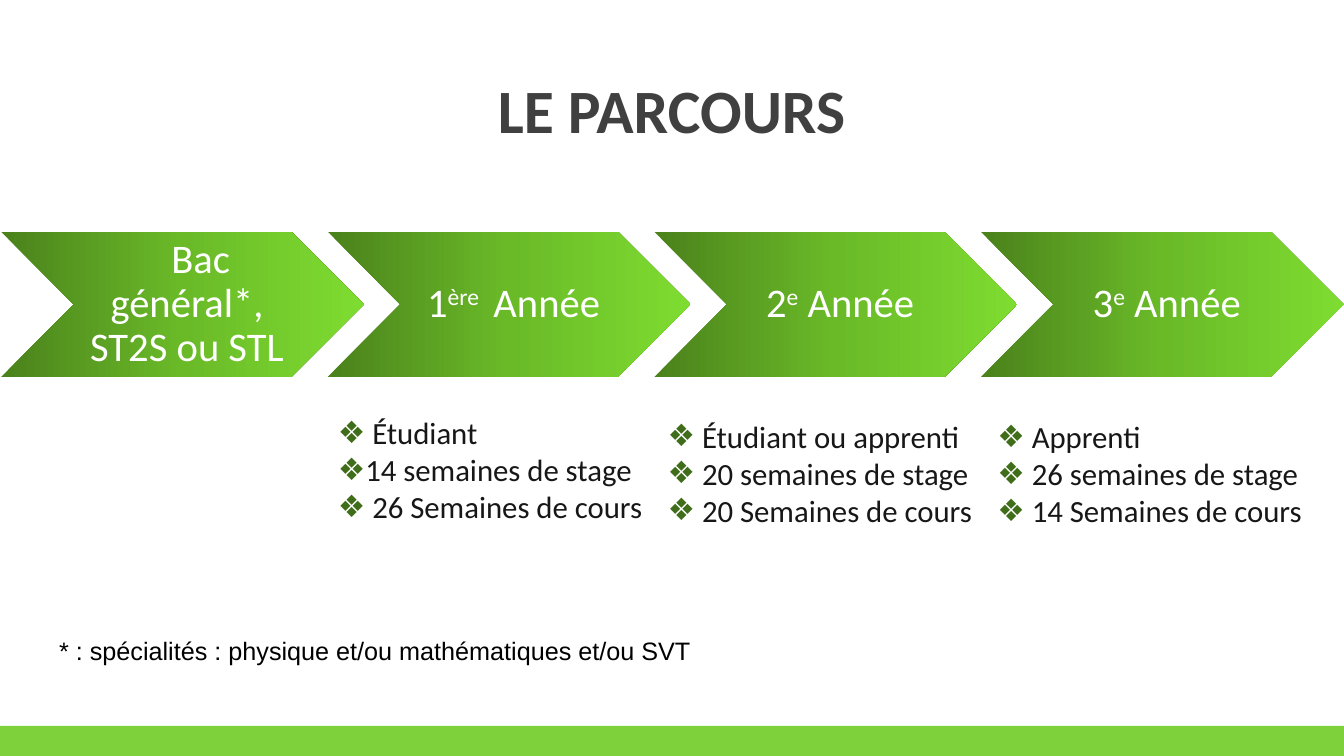
"""Build the slide showing the course path, year by year."""
from copy import deepcopy

from lxml import etree
from pptx import Presentation
from pptx import util as u
from pptx.dml.color import RGBColor
from pptx.enum import shapes, text
from pptx.oxml.ns import qn

THEME = {
    "bar": "7FD13B",
    "bullet": "3F6D19",
    "gradient": [(0, "4B821C"), (0.5, "6ABA28"), (1, "7EDC30")],
    "title": {"name": "Calibri", "size": u.Pt(44), "bold": True, "color": "404040"},
    "stage": {"name": "Calibri", "size": u.Pt(29), "bold": False, "color": "FFFFFF"},
    "list": {"name": "Calibri", "size": u.Pt(22), "bold": False, "color": "171717"},
    "note": {"name": "Arial", "size": u.Pt(18), "bold": False, "color": "000000"},
}
STAGES = [
    ("Bac général*, ST2S ou STL", "", ""),
    ("1", "ère ", " Année"),
    ("2", "e", " Année"),
    ("3", "e", " Année"),
]
YEARS = [
    (10.31, 3.05, [" Étudiant", "14 semaines de stage", " 26 Semaines de cours"]),
    (10.39, 3.81, [" Étudiant ou apprenti", " 20 semaines de stage", " 20 Semaines de cours"]),
    (10.41, 3.81, [" Apprenti", " 26 semaines de stage", " 14 Semaines de cours"]),
]
FRAME = {"word_wrap": True, "auto_size": text.MSO_AUTO_SIZE.NONE}
CENTRED = {"alignment": text.PP_ALIGN.CENTER, "line_spacing": 0.9}


def assign(target, values):
    for key, value in values.items():
        setattr(target, key, value)


def add_text(paragraph, words, role):
    run = paragraph.add_run()
    run.text = words
    style = dict(THEME[role])
    run.font.color.rgb = RGBColor.from_string(style.pop("color"))
    assign(run.font, style)
    return run


deck = Presentation()
assign(deck, {"slide_width": u.Cm(33.87), "slide_height": u.Cm(19.05)})
slide = deck.slides.add_slide(deck.slide_layouts.get_by_name("Comparison"))

bar = slide.shapes.add_shape(
    shapes.MSO_SHAPE.RECTANGLE, 0, u.Cm(18.29), deck.slide_width, u.Cm(0.76))
bar.shadow.inherit = False
bar.fill.solid()
bar.fill.fore_color.rgb = RGBColor.from_string(THEME["bar"])
bar.line.fill.background()

heading = slide.shapes.title
assign(heading, {"left": u.Cm(4.23), "top": u.Cm(1.27),
                 "width": u.Cm(25.4), "height": u.Cm(3.18)})
assign(heading.text_frame, {**FRAME, "vertical_anchor": text.MSO_ANCHOR.MIDDLE})
assign(heading.text_frame.paragraphs[0], CENTRED)
add_text(heading.text_frame.paragraphs[0], "LE PARCOURS", "title")

path_group = slide.shapes.add_group_shape()
for column, (label, ordinal, rest) in enumerate(STAGES):
    stage = path_group.shapes.add_shape(
        shapes.MSO_SHAPE.CHEVRON, u.Cm(0.03 + 8.23 * column), u.Cm(5.84),
        u.Cm(9.14), u.Cm(3.66))
    stage.shadow.inherit = False
    stage.line.fill.background()
    stage.fill.gradient()
    stage.fill.gradient_angle = 0
    stops = stage._element.spPr.find(".//" + qn("a:gsLst"))
    stops.append(deepcopy(stops[0]))
    for stop, (position, color) in zip(stage.fill.gradient_stops, THEME["gradient"]):
        stop.position = position
        stop.color.rgb = RGBColor.from_string(color)
    assign(stage.text_frame, {
        **FRAME, "vertical_anchor": text.MSO_ANCHOR.MIDDLE, "margin_left": u.Cm(0.33),
        "margin_right": u.Cm(0.1), "margin_top": u.Cm(0.1), "margin_bottom": u.Cm(0.1)})
    line = stage.text_frame.paragraphs[0]
    assign(line, {**CENTRED, "space_after": u.Pt(10.2)})
    add_text(line, label, "stage")
    if ordinal:
        raised = add_text(line, ordinal, "stage")
        raised._r.get_or_add_rPr().set("baseline", "30000")
        add_text(line, rest, "stage")
    else:
        line._p.get_or_add_pPr().set("indent", str(u.Cm(0.69)))

spare, *year_lists = [holder for holder in slide.placeholders
                      if holder.placeholder_format.idx > 0]
spare._element.getparent().remove(spare._element)
for column, (year_list, (top, height, items)) in enumerate(zip(year_lists, YEARS)):
    assign(year_list, {"left": u.Cm(8.26 + 8.31 * column), "top": u.Cm(top),
                       "width": u.Cm(8.99), "height": u.Cm(height)})
    frame = year_list.text_frame
    assign(frame, {**FRAME, "vertical_anchor": text.MSO_ANCHOR.TOP})
    for row, item in enumerate(items):
        line = frame.add_paragraph() if row else frame.paragraphs[0]
        assign(line, {"alignment": text.PP_ALIGN.LEFT, "line_spacing": 1.0,
                      "space_before": u.Pt(0), "space_after": u.Pt(0)})
        add_text(line, item, "list")
        props = line._p.get_or_add_pPr()
        props.set("marL", str(u.Cm(0.61)))
        props.set("indent", str(u.Cm(-0.61)))
        tint = etree.SubElement(props, qn("a:buClr"))
        etree.SubElement(tint, qn("a:srgbClr"), val=THEME["bullet"])
        etree.SubElement(props, qn("a:buChar"), char="❖")

note = slide.shapes.add_textbox(u.Cm(1.24), u.Cm(15.88), u.Cm(19.63), u.Cm(1.02))
assign(note.text_frame, {"word_wrap": True, "auto_size": text.MSO_AUTO_SIZE.SHAPE_TO_FIT_TEXT})
add_text(note.text_frame.paragraphs[0],
         "* : spécialités : physique et/ou mathématiques et/ou SVT", "note")

deck.save("out.pptx")
